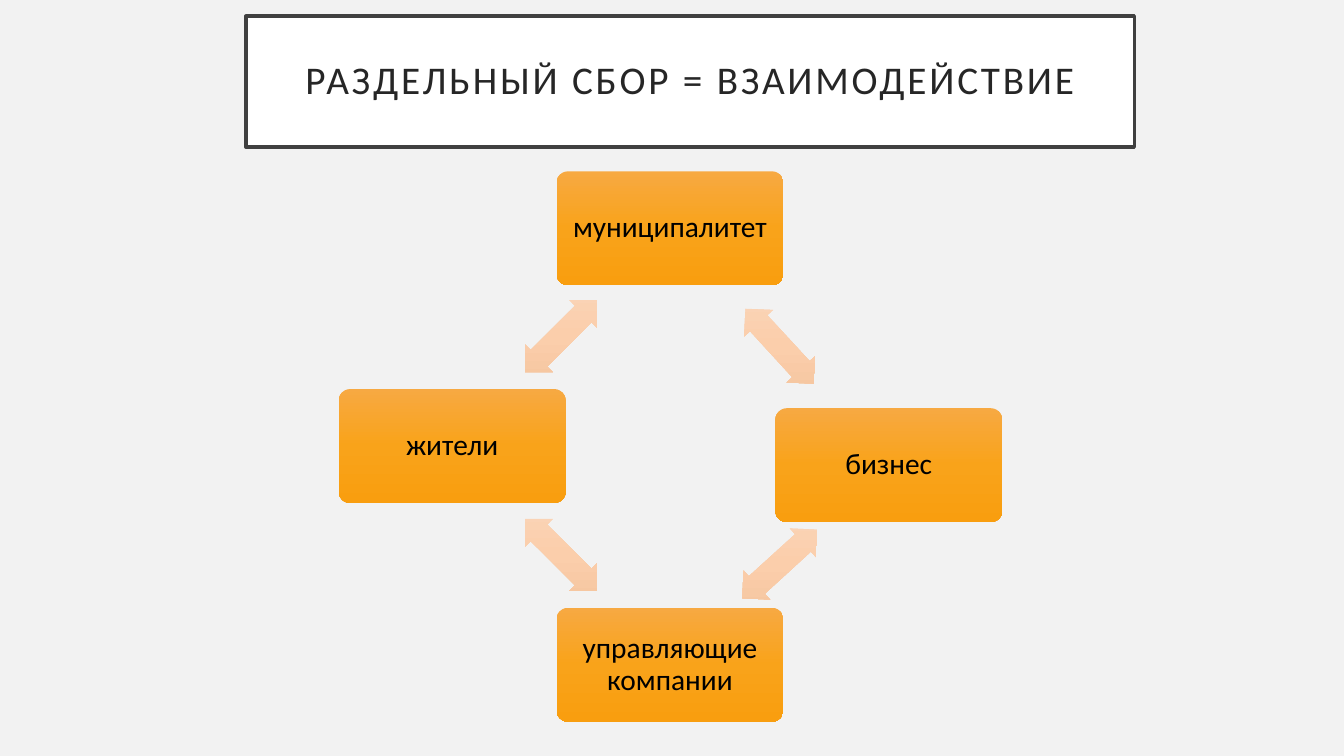
from lxml import etree
from pptx import Presentation
from pptx import util as u
from pptx.dml.color import RGBColor
from pptx.enum import shapes, text
from pptx.oxml import ns

ORANGE = ("F7A942", "F9A31A", "F99E0F")
PEACH = ("FAD4B7", "FBCEAB", "F5C59F")
PARTNER_SIZE = (2.25, 1.13)
ARROW_SIZE = (1.01, 0.39)

# left, top
PARTNERS = {
    "муниципалитет": (5.52, 1.7),
    "бизнес": (7.69, 4.05),
    "управляющие компании": (5.52, 6.03),
    "жители": (3.36, 3.86),
}
# left, top, rotation
ARROWS = [(7.23, 3.24, 47.4), (7.23, 5.4, 137.6), (5.06, 5.31, 225), (5.06, 3.14, 315)]


def colour(value):
    return RGBColor.from_string(value)


def set_all(target, values):
    for name, value in values.items():
        setattr(target, name, value)


class CyclePage:
    font = {"name": "Calibri", "bold": False}

    def __init__(self, deck, background):
        self.page = deck.slides.add_slide(deck.slide_layouts[5])
        fill = self.page.background.fill
        fill.solid()
        fill.fore_color.rgb = colour(background)

    def label(self, box, words, size, ink, inset):
        frame = box.text_frame
        margins = ("margin_left", "margin_top", "margin_right", "margin_bottom")
        set_all(frame, dict.fromkeys(margins, u.Inches(inset)))
        set_all(frame, {"word_wrap": True, "auto_size": text.MSO_AUTO_SIZE.NONE,
                        "vertical_anchor": text.MSO_ANCHOR.MIDDLE})
        para = frame.paragraphs[0]
        set_all(para, {"alignment": text.PP_ALIGN.CENTER, "line_spacing": 0.9})
        span = para.add_run()
        span.text = words
        set_all(span.font, {**self.font, "size": u.Pt(size)})
        span.font.color.rgb = colour(ink)
        return span

    def title(self, words, left, top, width, height):
        box = self.page.shapes.title
        set_all(box, {"left": u.Inches(left), "top": u.Inches(top),
                      "width": u.Inches(width), "height": u.Inches(height)})
        box.fill.solid()
        box.fill.fore_color.rgb = colour("FFFFFF")
        box.line.color.rgb = colour("404040")
        box.line.width = u.Pt(2.5)
        span = self.label(box, words, 28, "262626", 0.2)
        span.font._element.set("spc", "200")

    def gradient_shape(self, kind, place, size, adjustments, stops):
        shape = self.page.shapes.add_shape(kind, *map(u.Inches, (*place, *size)))
        shape.shadow.inherit = False
        shape.line.fill.background()
        for index, value in enumerate(adjustments):
            shape.adjustments[index] = value
        self.fade(shape, stops)
        return shape

    def fade(self, shape, stops):
        """Fill from top to bottom, whatever the rotation of the shape."""
        shape.fill.background()
        empty = shape._element.spPr.find(ns.qn("a:noFill"))
        grad = etree.Element(ns.qn("a:gradFill"), rotWithShape="0")
        stop_list = etree.SubElement(grad, ns.qn("a:gsLst"))
        for index, value in enumerate(stops):
            stop = etree.SubElement(stop_list, ns.qn("a:gs"), pos=str(index * 50000))
            etree.SubElement(stop, ns.qn("a:srgbClr"), val=value)
        etree.SubElement(grad, ns.qn("a:lin"), ang="5400000", scaled="0")
        empty.getparent().replace(empty, grad)

    def partner(self, words, place):
        box = self.gradient_shape(shapes.MSO_SHAPE.ROUNDED_RECTANGLE, place,
                                  PARTNER_SIZE, [0.1], ORANGE)
        self.label(box, words, 21, "000000", 0.09)

    def arrow(self, left, top, rotation):
        arrow = self.gradient_shape(shapes.MSO_SHAPE.LEFT_RIGHT_ARROW, (left, top),
                                    ARROW_SIZE, [0.6, 0.5], PEACH)
        arrow.rotation = rotation


def main():
    deck = Presentation()
    set_all(deck, {"slide_width": u.Inches(13.33), "slide_height": u.Inches(7.5)})
    cycle = CyclePage(deck, "F2F2F2")
    cycle.title("РАЗДЕЛЬНЫЙ СБОР = ВЗАИМОДЕЙСТВИЕ", 2.44, 0.16, 8.81, 1.3)
    for words, place in PARTNERS.items():
        cycle.partner(words, place)
    for arrow in ARROWS:
        cycle.arrow(*arrow)
    deck.save("out.pptx")


if __name__ == "__main__":
    main()
